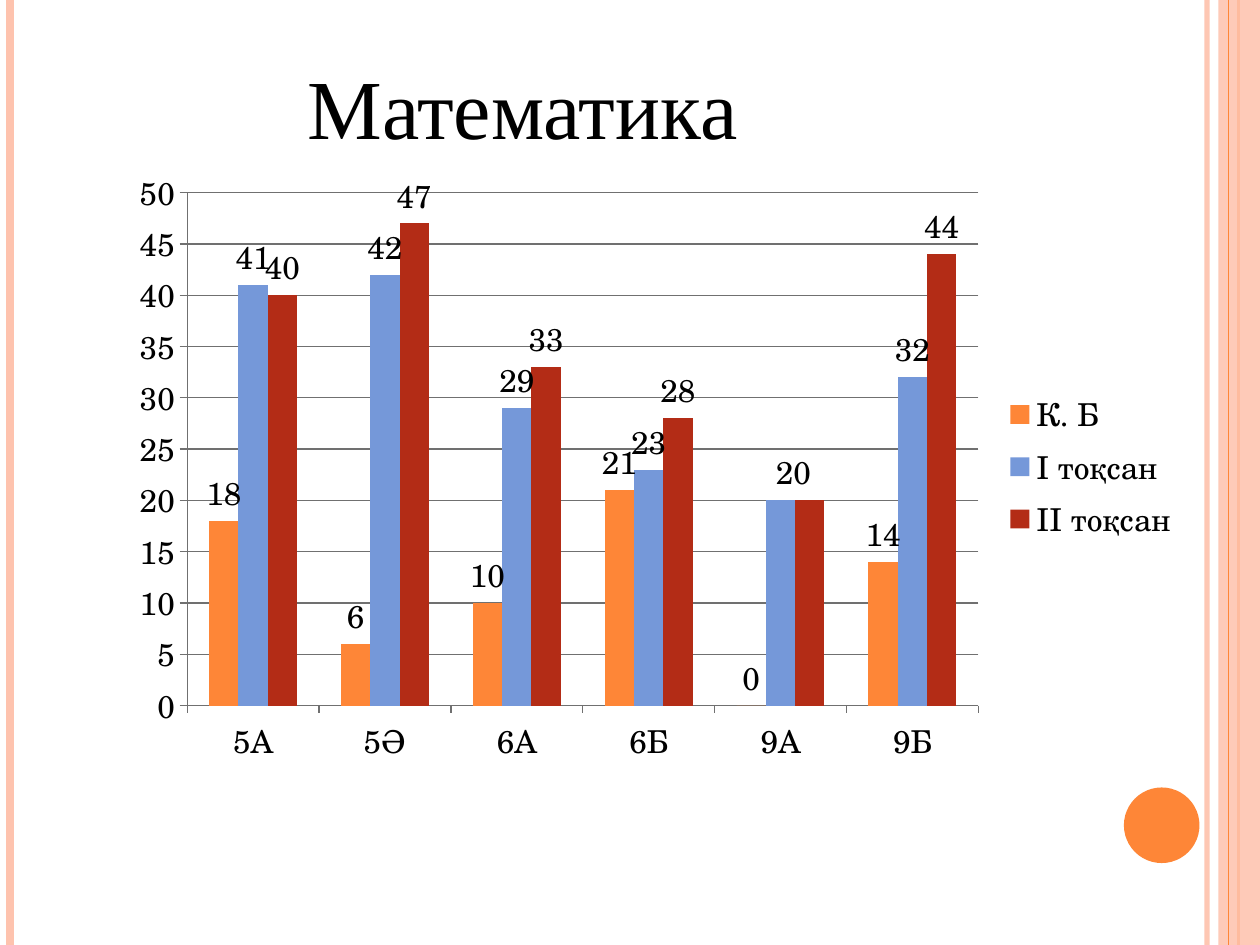
from dataclasses import dataclass
from typing import Optional

from pptx import Presentation
from pptx.chart.data import CategoryChartData
from pptx.dml.color import RGBColor
from pptx.enum.chart import XL_CHART_TYPE as ChartType, XL_LABEL_POSITION as LabelPosition
from pptx.enum.chart import XL_LEGEND_POSITION as LegendPosition, XL_TICK_MARK as TickMark
from pptx.enum.shapes import MSO_CONNECTOR as Connector, MSO_SHAPE as ShapeType
from pptx.enum.text import MSO_ANCHOR as Anchor, MSO_AUTO_SIZE as AutoSize, PP_ALIGN as Align
from pptx.oxml import parse_xml
from pptx.oxml.ns import nsdecls, qn
from pptx.util import Inches, Pt

ORANGE = RGBColor(0xFE, 0x86, 0x37)
PINK = RGBColor(0xFE, 0xC3, 0xAE)
BLUE = RGBColor(0x75, 0x98, 0xD9)
RED = RGBColor(0xB3, 0x2C, 0x16)
BLACK = RGBColor(0, 0, 0)
GRAY = RGBColor(0x70, 0x70, 0x70)
WIDTH, HEIGHT = 10, 7.5
TITLE_FONT, CHART_FONT = "Times New Roman", "TeX Gyre Schola"


@dataclass
class Stripe:
    x: float
    color: RGBColor
    weight: float
    opacity: int = 100


@dataclass
class Quarter:
    name: str
    values: tuple
    color: RGBColor


CLASSES = ("5А", "5Ә", "6А", "6Б", "9А", "9Б")
QUARTERS = (
    Quarter("К. Б", (18, 6, 10, 21, 0, 14), ORANGE),
    Quarter("І тоқсан", (41, 42, 29, 23, 20, 32), BLUE),
    Quarter("ІІ тоқсан", (40, 47, 33, 28, 20, 44), RED),
)
SHARED_LABEL = CLASSES.index("9А")
STRIPES_BEHIND = (Stripe(9.58, PINK, 3, 93), Stripe(0.08, PINK, 4.5), Stripe(9.83, ORANGE, 1.5))
STRIPE_FRONT = Stripe(9.75, ORANGE, 0.75)


def set_opacity(element, percent: int) -> None:
    color = next(element.iter(qn("a:srgbClr")))
    color.append(parse_xml(f'<a:alpha {nsdecls("a")} val="{percent * 1000}"/>'))


def draw_stripe(slide, stripe: Stripe) -> None:
    x = Inches(stripe.x)
    line = slide.shapes.add_connector(Connector.STRAIGHT, x, 0, x, Inches(HEIGHT))
    line.line.color.rgb = stripe.color
    line.line.width = Pt(stripe.weight)
    if stripe.opacity < 100:
        set_opacity(line.line._get_or_add_ln(), stripe.opacity)
    line._element.spPr.append(parse_xml(f'<a:effectLst {nsdecls("a")}/>'))


def draw_shape(slide, kind, left, top, width, height, color: RGBColor, opacity: int = 100) -> None:
    shape = slide.shapes.add_shape(kind, *map(Inches, (left, top, width, height)))
    shape.shadow.inherit = False
    shape.fill.solid()
    shape.fill.fore_color.rgb = color
    shape.line.fill.background()
    if opacity < 100:
        set_opacity(shape._element.spPr, opacity)


def format_font(font, *, name: str, size: float, color: RGBColor = BLACK) -> None:
    font.name, font.size, font.bold = name, Pt(size), False
    font.color.rgb = color


def write_text(shape, text: str, *, align=Align.LEFT, **font_format) -> None:
    frame = shape.text_frame
    frame.word_wrap = True
    frame.auto_size = AutoSize.NONE
    frame.vertical_anchor = Anchor.TOP
    paragraph = frame.paragraphs[0]
    paragraph.alignment = align
    run = paragraph.add_run()
    run.text = text
    format_font(run.font, **font_format)


def manual_layout(inner: bool = False, **shares: float):
    target = '<c:layoutTarget val="inner"/>' if inner else ""
    modes = '<c:xMode val="edge"/><c:yMode val="edge"/>' if inner else ""
    sizes = "".join(f'<c:{key} val="{value}"/>' for key, value in shares.items())
    return parse_xml(f'<c:layout {nsdecls("c")}><c:manualLayout>{target}{modes}{sizes}'
                     "</c:manualLayout></c:layout>")


def change_label(labels, index: int, shift: Optional[float] = None) -> None:
    """Move one point's label sideways, or remove it when no shift is given."""
    label = parse_xml(f'<c:dLbl {nsdecls("c")}><c:idx val="{index}"/></c:dLbl>')
    if shift is None:
        label.append(parse_xml(f'<c:delete {nsdecls("c")} val="1"/>'))
    else:
        label.append(manual_layout(x=shift, y=0))
        label.append(parse_xml(f'<c:dLblPos {nsdecls("c")} val="outEnd"/>'))
        for part in ("LegendKey", "Val", "CatName", "SerName", "Percent", "BubbleSize"):
            shown = int(part == "Val")
            label.append(parse_xml(f'<c:show{part} {nsdecls("c")} val="{shown}"/>'))
    labels._element.insert(0, label)


def draw_chart(slide) -> None:
    data = CategoryChartData()
    data.categories = CLASSES
    for quarter in QUARTERS:
        data.add_series(quarter.name, quarter.values)
    chart = slide.shapes.add_chart(
        ChartType.COLUMN_CLUSTERED, *map(Inches, (0.94, 1.25, 8.52, 4.91)), data).chart
    format_font(chart.font, name=CHART_FONT, size=18)
    chart.has_title = False
    chart.has_legend = True
    chart.legend.position = LegendPosition.RIGHT
    chart.legend.include_in_layout = False

    # Plot area and axes
    plot_area = chart._chartSpace.chart.plotArea
    for layout in plot_area.findall(qn("c:layout")):
        plot_area.remove(layout)
    plot_area.insert(0, manual_layout(inner=True, x=0.064, y=0.057, w=0.737, h=0.829))
    value_axis = chart.value_axis
    value_axis.minimum_scale, value_axis.maximum_scale, value_axis.major_unit = 0, 50, 5
    value_axis.has_major_gridlines = True
    for axis in (value_axis, chart.category_axis):
        axis.major_tick_mark = TickMark.OUTSIDE
        axis.minor_tick_mark = TickMark.NONE
    for part in (value_axis, value_axis.major_gridlines, chart.category_axis):
        part.format.line.color.rgb = GRAY
        part.format.line.width = Pt(0.75)

    # Columns and their values
    plot = chart.plots[0]
    plot.vary_by_categories = False
    plot.gap_width, plot.overlap = 150, 0
    for series, quarter in zip(plot.series, QUARTERS):
        series.format.fill.solid()
        series.format.fill.fore_color.rgb = quarter.color
        series.data_labels.show_value = True
        series.data_labels.position = LabelPosition.OUTSIDE_END
        format_font(series.data_labels.font, name=CHART_FONT, size=18)
    change_label(plot.series[1].data_labels, SHARED_LABEL, shift=0.012)
    change_label(plot.series[2].data_labels, SHARED_LABEL)


def main() -> None:
    presentation = Presentation()
    presentation.slide_width, presentation.slide_height = Inches(WIDTH), Inches(HEIGHT)
    slide = presentation.slides.add_slide(presentation.slide_layouts[5])

    # Side decoration
    for stripe in STRIPES_BEHIND:
        draw_stripe(slide, stripe)
    draw_shape(slide, ShapeType.RECTANGLE, 9.67, 0, 0.33, HEIGHT, PINK, opacity=87)
    draw_stripe(slide, STRIPE_FRONT)
    draw_shape(slide, ShapeType.OVAL, 8.92, 6.25, 0.6, 0.6, ORANGE)

    draw_chart(slide)

    # Title in front of the chart
    title = slide.shapes.title
    title.left, title.top, title.width, title.height = map(Inches, (2.34, 0.39, 4.92, 0.91))
    write_text(title, "Математика", name=TITLE_FONT, size=48)
    slide.shapes._spTree.append(title._element)

    presentation.save("out.pptx")


if __name__ == "__main__":
    main()
